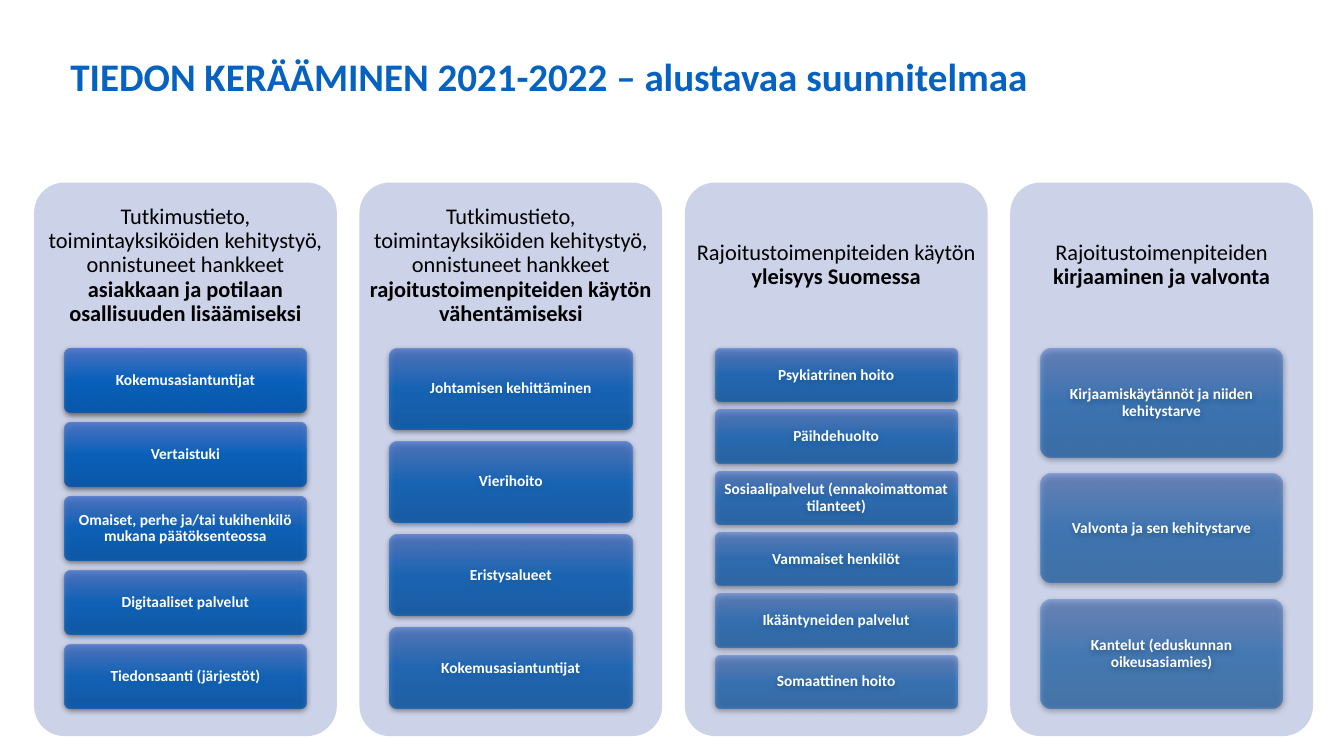
from itertools import count

from lxml.etree import SubElement
from pptx import Presentation
from pptx.dml.color import RGBColor
from pptx.enum.shapes import MSO_SHAPE
from pptx.enum.text import MSO_ANCHOR, MSO_AUTO_SIZE, PP_ALIGN
from pptx.oxml.ns import qn
from pptx.util import Cm, Pt

TITLE_BLUE = RGBColor(0x05, 0x62, 0xC1)
PANEL = RGBColor(0xCC, 0xD3, 0xE9)
BLACK = RGBColor(0, 0, 0)
WHITE = RGBColor(0xFF, 0xFF, 0xFF)
CARD_TOP = RGBColor(0x4B, 0x76, 0xCC)
CARD_MIDDLE = RGBColor(0x00, 0x62, 0xC6)
CARD_BOTTOM = RGBColor(0x00, 0x57, 0xB0)

TITLE_FONT = {"name": "Calibri", "size": Pt(27.9), "bold": True}
HEADING_FONT = {"name": "Calibri", "size": Pt(16), "bold": False}
STRONG_FONT = {**HEADING_FONT, "bold": True}
CARD_FONT = {"name": "Calibri", "size": Pt(11), "bold": True}

TITLE = "TIEDON KERÄÄMINEN 2021-2022 – alustavaa suunnitelmaa"
RESEARCH = "Tutkimustieto, toimintayksiköiden kehitystyö, onnistuneet hankkeet "
COLUMNS = [
    (RESEARCH, "asiakkaan ja potilaan osallisuuden lisäämiseksi",
     ["Kokemusasiantuntijat", "Vertaistuki",
      "Omaiset, perhe ja/tai tukihenkilö mukana päätöksenteossa",
      "Digitaaliset palvelut", "Tiedonsaanti (järjestöt)"]),
    (RESEARCH, "rajoitustoimenpiteiden käytön vähentämiseksi",
     ["Johtamisen kehittäminen", "Vierihoito", "Eristysalueet",
      "Kokemusasiantuntijat"]),
    ("Rajoitustoimenpiteiden käytön ", "yleisyys Suomessa",
     ["Psykiatrinen hoito", "Päihdehuolto",
      "Sosiaalipalvelut (ennakoimattomat tilanteet)", "Vammaiset henkilöt",
      "Ikääntyneiden palvelut", "Somaattinen hoito"]),
    ("Rajoitustoimenpiteiden ", "kirjaaminen ja valvonta",
     ["Kirjaamiskäytännöt ja niiden kehitystarve",
      "Valvonta ja sen kehitystarve", "Kantelut (eduskunnan oikeusasiamies)"]),
]
CARD_COUNT = sum(len(cards) for _, _, cards in COLUMNS)
GAP_RATIO = 0.154


def set_attrs(obj, values):
    """Set each attribute named in values."""
    for name, value in values.items():
        setattr(obj, name, value)


def add_run(p, text, font, color):
    """Append a formatted run to a paragraph."""
    r = p.add_run()
    r.text = text
    set_attrs(r.font, font)
    r.font.color.rgb = color


def centre_text(sp, side, edge):
    """Prepare a shape for centred text and return its first paragraph."""
    tf = sp.text_frame
    set_attrs(tf, {"word_wrap": True, "vertical_anchor": MSO_ANCHOR.MIDDLE,
                   "margin_left": side, "margin_right": side,
                   "margin_top": edge, "margin_bottom": edge})
    p = tf.paragraphs[0]
    set_attrs(p, {"alignment": PP_ALIGN.CENTER, "line_spacing": 0.9})
    return p


def add_rounded(shapes, x, y, w, h):
    """Add a rounded box without outline or shadow."""
    sp = shapes.add_shape(MSO_SHAPE.ROUNDED_RECTANGLE, x, y, w, h)
    sp.adjustments[0] = 0.1
    sp.shadow.inherit = False
    sp.line.fill.background()
    return sp


def add_color(parent, color, alpha):
    """Append a colour with an opacity in percent."""
    clr = SubElement(parent, qn("a:srgbClr"), val=str(color))
    SubElement(clr, qn("a:alpha"), val=str(round(alpha * 1000)))


def style_card(sp, alpha):
    """Give a card its translucent vertical gradient and soft shadow."""
    sp.fill.gradient()
    grad = sp._element.spPr.find(qn("a:gradFill"))
    for child in list(grad):
        grad.remove(child)
    stops = SubElement(grad, qn("a:gsLst"))
    for pos, color in ((0, CARD_TOP), (50, CARD_MIDDLE), (100, CARD_BOTTOM)):
        add_color(SubElement(stops, qn("a:gs"), pos=str(pos * 1000)), color, alpha)
    SubElement(grad, qn("a:lin"), ang="5400000", scaled="0")
    effects = sp._element.spPr.find(qn("a:effectLst"))
    shadow = SubElement(effects, qn("a:outerShdw"), blurRad=str(Pt(4.5)),
                        dist=str(Pt(1.5)), dir="5400000", algn="ctr",
                        rotWithShape="0")
    add_color(shadow, BLACK, 63)


def add_title(s, x, y, w, h):
    """Place and fill the title placeholder."""
    sp = s.shapes.title
    set_attrs(sp, {"left": x, "top": y, "width": w, "height": h})
    tf = sp.text_frame
    set_attrs(tf, {"word_wrap": True, "auto_size": MSO_AUTO_SIZE.NONE,
                   "vertical_anchor": MSO_ANCHOR.MIDDLE})
    p = tf.paragraphs[0]
    p.alignment = PP_ALIGN.LEFT
    add_run(p, TITLE, TITLE_FONT, TITLE_BLUE)


def add_cards(shapes, cards, numbers, x, y, w, h):
    """Stack cards evenly in the box, fading with their running number."""
    card_h = h / (len(cards) + (len(cards) - 1) * GAP_RATIO)
    for i, text in enumerate(cards):
        top = round(y + i * card_h * (1 + GAP_RATIO))
        sp = add_rounded(shapes, x, top, w, round(card_h))
        style_card(sp, 90 - 40 * next(numbers) / (CARD_COUNT - 1))
        add_run(centre_text(sp, Cm(0.07), Cm(0.05)), text, CARD_FONT, WHITE)


def add_column(shapes, column, numbers, x, y, w, h):
    """Draw a panel with its heading and cards."""
    plain, strong, cards = column
    panel = add_rounded(shapes, x, y, w, h)
    panel.fill.solid()
    panel.fill.fore_color.rgb = PANEL
    head_h = round(h * 0.3)
    p = centre_text(shapes.add_textbox(x, y, w, head_h), Cm(0.17), Cm(0.17))
    add_run(p, plain, HEADING_FONT, BLACK)
    add_run(p, strong, STRONG_FONT, BLACK)
    add_cards(shapes, cards, numbers, x + round(w * 0.1), y + head_h,
              round(w * 0.8), round(h * 0.65))


def main():
    """Build and save the slide."""
    prs = Presentation()
    set_attrs(prs, {"slide_width": Cm(33.87), "slide_height": Cm(19.05)})
    s = prs.slides.add_slide(prs.slide_layouts[5])
    add_title(s, Cm(1.52), Cm(1.02), Cm(26.9), Cm(1.8))
    shapes = s.shapes.add_group_shape().shapes
    numbers = count()
    for i, column in enumerate(COLUMNS):
        add_column(shapes, column, numbers, Cm(0.86) + i * Cm(8.2), Cm(4.6),
                   Cm(7.63), Cm(13.95))
    prs.save("out.pptx")


if __name__ == "__main__":
    main()
